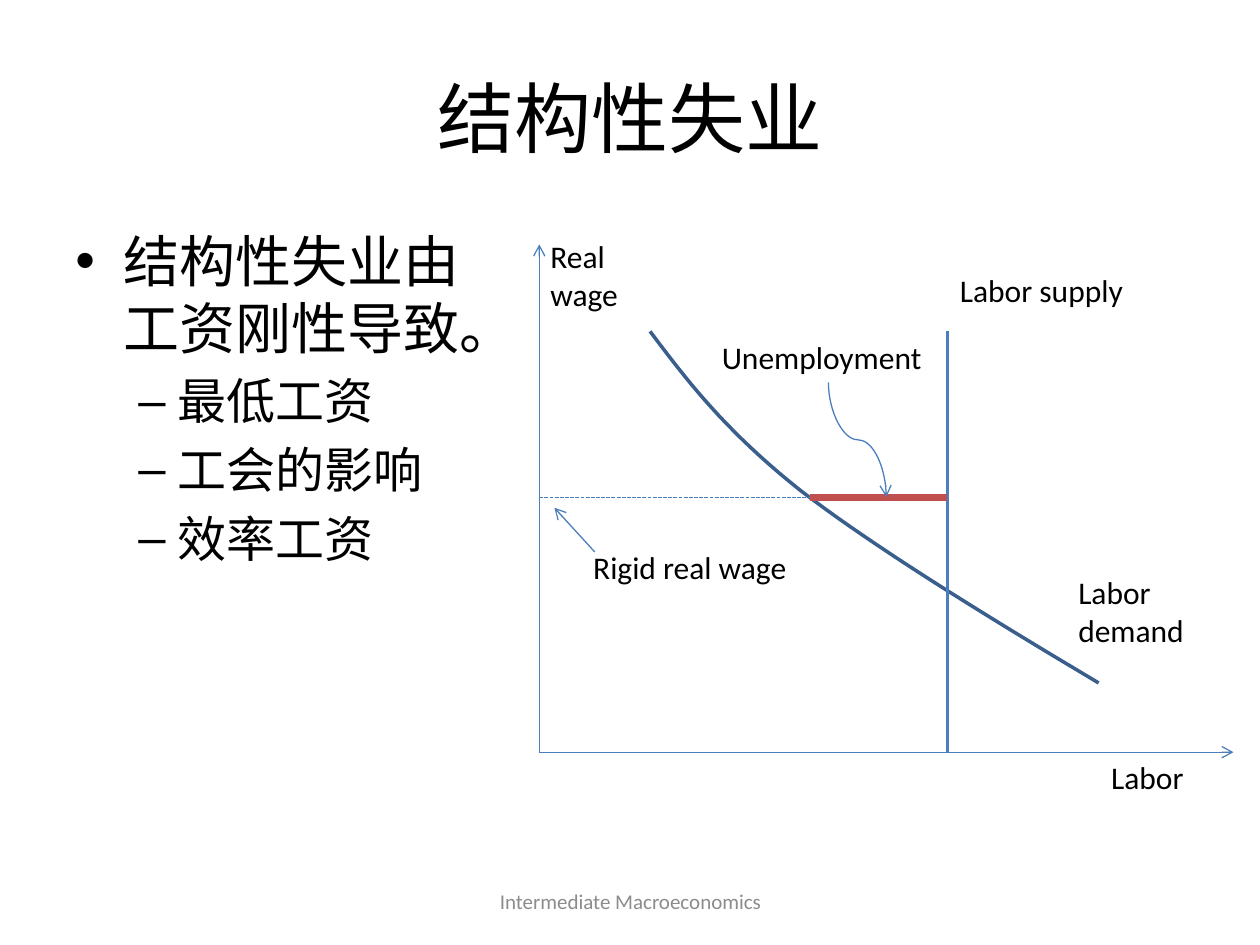
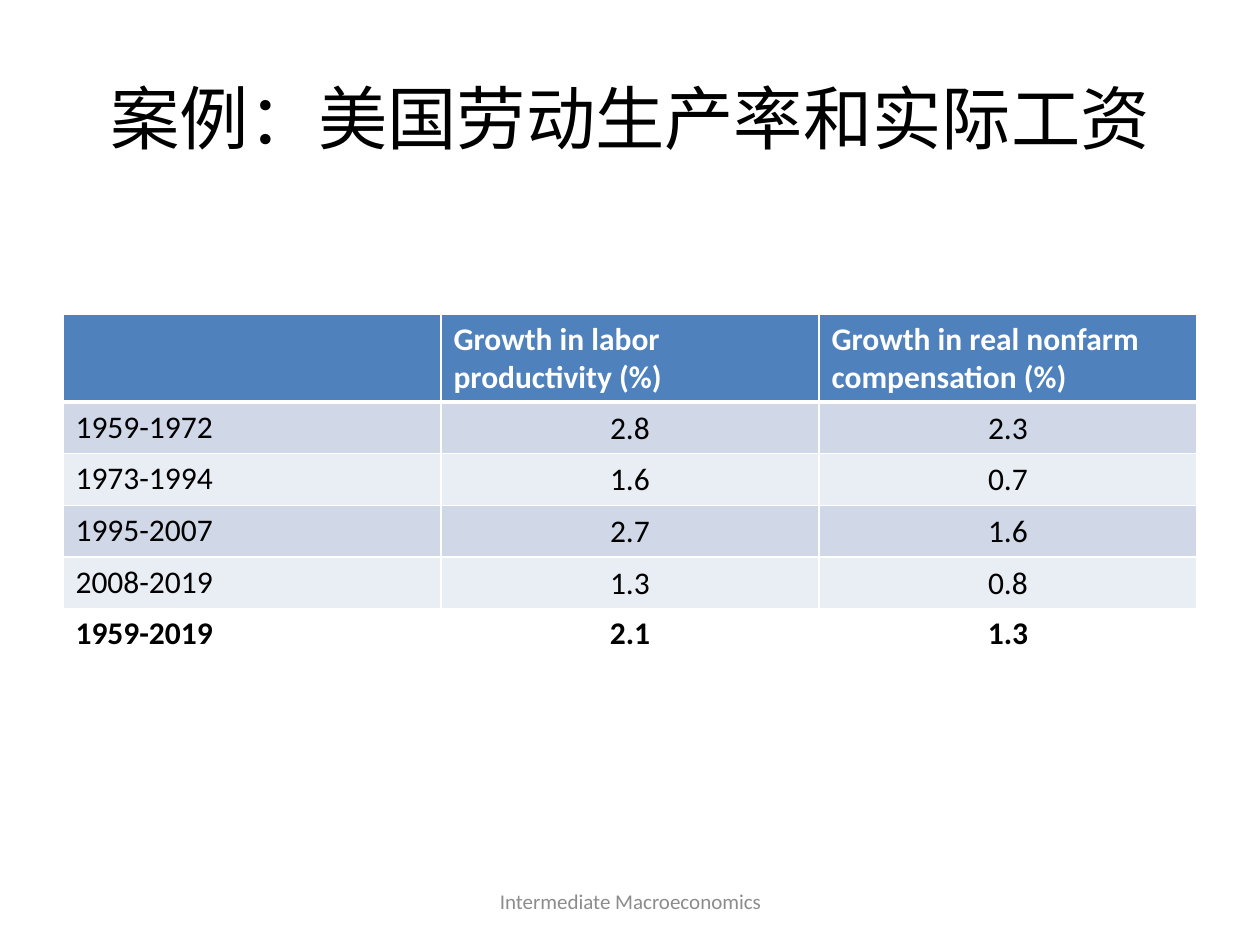
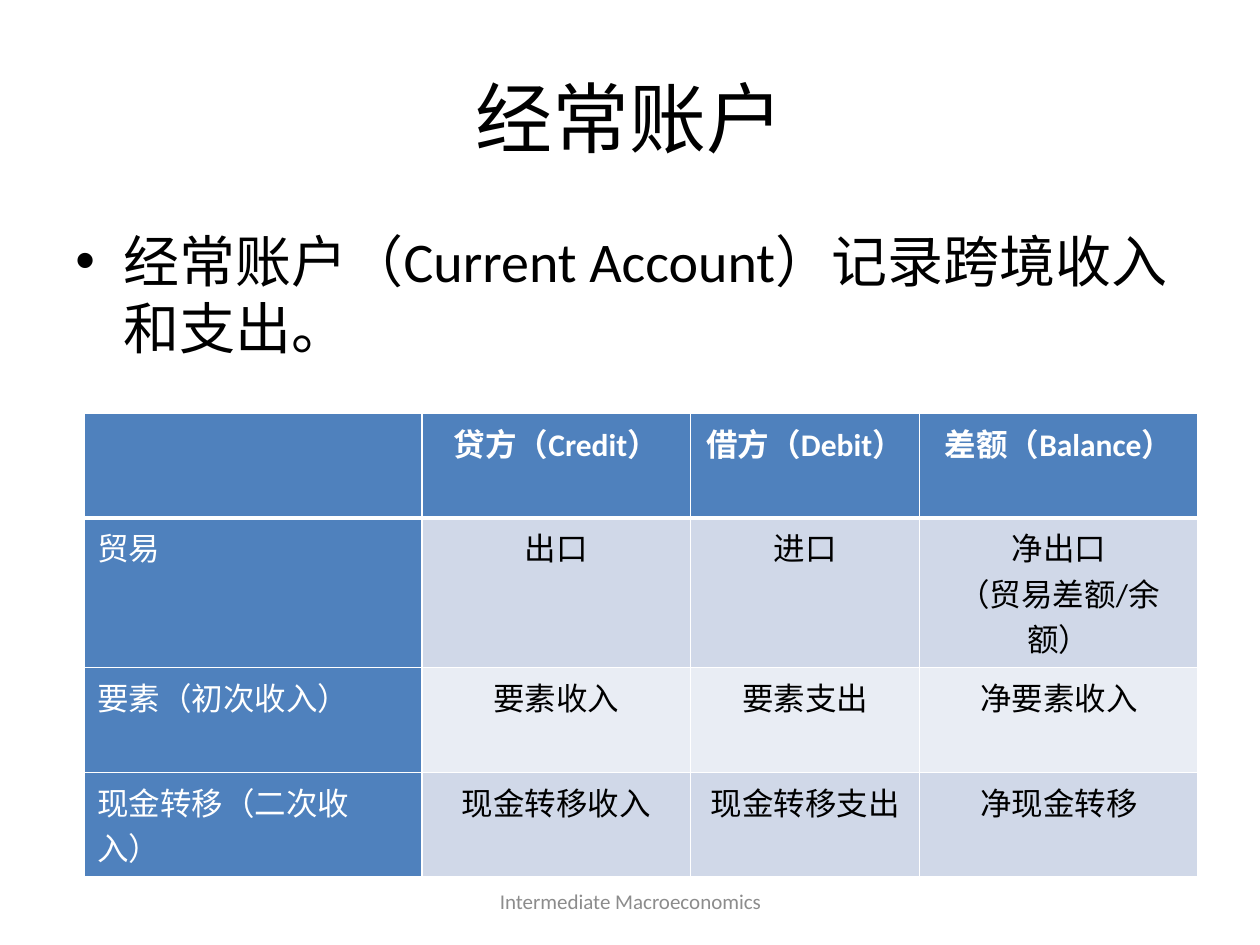
from dataclasses import dataclass

from lxml.etree import SubElement
from pptx import Presentation
from pptx.dml.color import RGBColor
from pptx.enum.dml import MSO_LINE
from pptx.enum.lang import MSO_LANGUAGE_ID as Language
from pptx.enum.shapes import MSO_CONNECTOR as Connector
from pptx.enum.text import MSO_ANCHOR as Anchor, MSO_AUTO_SIZE as AutoSize, PP_ALIGN as Align
from pptx.oxml.ns import qn
from pptx.util import Inches, Pt


@dataclass(frozen=True)
class Theme:
    font: str = "Calibri"
    text: str = "000000"
    white: str = "FFFFFF"
    footer: str = "8C8C8C"
    axis: str = "4B7EBC"
    demand: str = "3A5F8C"
    gap: str = "C0504D"
    header: str = "4F81BD"
    bands: tuple = ("D0D8E8", "E9EDF4")
    title_size: float = 44
    long_title_size: float = 39.6
    body_sizes: tuple = (32, 28)
    label_size: float = 18
    footer_size: float = 12
    thin: float = 0.75
    curve: float = 2
    thick: float = 4


theme = Theme()


def format_text(text_frame, text, size, color=theme.text, bold=False, alignment=Align.LEFT):
    text_frame.text = text
    text_frame.word_wrap = True
    for paragraph in text_frame.paragraphs:
        paragraph.alignment = alignment
        for run in paragraph.runs:
            run.font.name = theme.font
            run.font.size = Pt(size)
            run.font.bold = bold
            run.font.color.rgb = RGBColor.from_string(color)
            run.font.language_id = Language.SIMPLIFIED_CHINESE


def add_line(slide, start, end, color=theme.axis, width=theme.thin, kind=Connector.STRAIGHT, arrow=False):
    connector = slide.shapes.add_connector(kind, *map(Inches, start + end))
    connector.line.color.rgb = RGBColor.from_string(color)
    connector.line.width = Pt(width)
    if arrow:
        SubElement(connector.line._get_or_add_ln(), qn("a:tailEnd"), type="arrow")
    SubElement(connector._element.spPr, qn("a:effectLst"))
    return connector


presentation = Presentation()
presentation.slide_width = Inches(10)
presentation.slide_height = Inches(7.5)
title_only = presentation.slide_layouts[5]

titles = [
    ("结构性失业", theme.title_size),
    ("案例：美国劳动生产率和实际工资", theme.long_title_size),
    ("经常账户", theme.title_size),
]
slides = []
for text, size in titles:
    slide = presentation.slides.add_slide(title_only)
    title = slide.shapes.title
    title.left, title.top, title.width, title.height = map(Inches, (0.5, 0.3, 9, 1.25))
    format_text(title.text_frame, text, size, alignment=Align.CENTER)
    title.text_frame.vertical_anchor = Anchor.MIDDLE
    title.text_frame.auto_size = AutoSize.NONE
    footer = slide.shapes.add_textbox(*map(Inches, (3.42, 6.95, 3.17, 0.4)))
    format_text(footer.text_frame, "Intermediate Macroeconomics", theme.footer_size,
                theme.footer, alignment=Align.CENTER)
    footer.text_frame.vertical_anchor = Anchor.MIDDLE
    slides.append(slide)
unemployment_slide, productivity_slide, account_slide = slides

bullet_levels = [("•", 0.38, 0.38), ("–", 0.81, 0.31)]
bodies = [
    (unemployment_slide, 3.48, ["结构性失业由工资刚性导致。", "最低工资", "工会的影响", "效率工资"]),
    (account_slide, 9, ["经常账户（Current Account）记录跨境收入和支出。"]),
]
for slide, width, lines in bodies:
    body = slide.shapes.add_textbox(*map(Inches, (0.5, 1.75, width, 4.95)))
    format_text(body.text_frame, "\n".join(lines), theme.body_sizes[0])
    for index, paragraph in enumerate(body.text_frame.paragraphs):
        level = min(index, 1)
        bullet, margin, hanging = bullet_levels[level]
        size = theme.body_sizes[level]
        paragraph.level = level
        paragraph.space_before = Pt(0.2 * size)
        paragraph.runs[0].font.size = Pt(size)
        properties = paragraph._p.get_or_add_pPr()
        properties.set("marL", str(Inches(margin)))
        properties.set("indent", str(-Inches(hanging)))
        SubElement(properties, qn("a:buFont"), typeface="Arial")
        SubElement(properties, qn("a:buChar"), char=bullet)

origin_x, origin_y = 4.28, 5.97
supply_x, rigid_wage_y, curve_top = 7.52, 3.95, 2.63
add_line(unemployment_slide, (origin_x, origin_y), (9.79, origin_y), arrow=True)
add_line(unemployment_slide, (origin_x, origin_y), (origin_x, 1.94), arrow=True)

demand_beziers = [
    ((5.16, curve_top), (5.46, 3.03), (5.76, 3.42), (6.35, 3.89)),
    ((6.35, 3.89), (6.95, 4.35), (7.83, 4.89), (8.72, 5.42)),
]
steps = 20
demand_points = []
for bezier in demand_beziers:
    for step in range(1, steps + 1):
        t = step / steps
        weights = ((1 - t) ** 3, 3 * t * (1 - t) ** 2, 3 * t ** 2 * (1 - t), t ** 3)
        demand_points.append(tuple(
            Inches(sum(weight * point[axis] for weight, point in zip(weights, bezier)))
            for axis in (0, 1)))
builder = unemployment_slide.shapes.build_freeform(*map(Inches, demand_beziers[0][0]))
builder.add_line_segments(demand_points, close=False)
demand_curve = builder.convert_to_shape()
demand_curve.shadow.inherit = False
demand_curve.fill.background()
demand_curve.line.color.rgb = RGBColor.from_string(theme.demand)
demand_curve.line.width = Pt(theme.curve)

rigid_wage = add_line(unemployment_slide, (origin_x, rigid_wage_y), (supply_x, rigid_wage_y))
rigid_wage.line.dash_style = MSO_LINE.SQUARE_DOT
add_line(unemployment_slide, (supply_x, curve_top), (supply_x, origin_y), width=theme.curve)
add_line(unemployment_slide, (6.43, rigid_wage_y), (supply_x, rigid_wage_y), theme.gap, theme.thick)
pointer = add_line(unemployment_slide, (7.26, 3.26), (6.35, 3.72), kind=Connector.CURVE, arrow=True)
pointer._element.spPr.xfrm.set("rot", str(270 * 60000))
add_line(unemployment_slide, (4.72, 4.38), (4.4, 4.03), arrow=True)

labels = [
    ("Unemployment", (5.63, 2.63, 1.89, 0.4)),
    ("Rigid real wage", (4.61, 4.3, 2.2, 0.4)),
    ("Labor demand", (8.46, 4.5, 1.33, 0.71)),
    ("Labor supply", (supply_x, 2.1, 1.61, 0.4)),
    ("Labor", (8.72, origin_y, 1.28, 0.4)),
    ("Real wage", (4.27, 1.83, 1.15, 0.71)),
]
for text, box in labels:
    label = unemployment_slide.shapes.add_textbox(*map(Inches, box))
    format_text(label.text_frame, text, theme.label_size)

productivity_rows = [
    ("", "Growth in labor productivity (%)", "Growth in real nonfarm compensation (%)"),
    ("1959-1972", "2.8", "2.3"),
    ("1973-1994", "1.6", "0.7"),
    ("1995-2007", "2.7", "1.6"),
    ("2008-2019", "1.3", "0.8"),
    ("1959-2019", "2.1", "1.3"),
]
account_rows = [
    ("", "贷方（Credit）", "借方（Debit）", "差额（Balance）"),
    ("贸易", "出口", "进口", "净出口\n（贸易差额/余额）"),
    ("要素（初次收入）", "要素收入", "要素支出", "净要素收入"),
    ("现金转移（二次收入）", "现金转移收入", "现金转移支出", "净现金转移"),
]
tables = [
    (productivity_slide, (0.5, 2.49), (3, 3, 3), (0.66,) + (0.41,) * 5, productivity_rows),
    (account_slide, (0.67, 3.28), (2.68, 2.13, 1.82, 2.21), (0.83, 1.19, 0.83, 0.83), account_rows),
]
for slide, corner, widths, heights, rows in tables:
    box = corner + (sum(widths), sum(heights))
    table = slide.shapes.add_table(len(rows), len(widths), *map(Inches, box)).table
    for column, width in zip(table.columns, widths):
        column.width = Inches(width)
    for row, height in zip(table.rows, heights):
        row.height = Inches(height)
    numeric = rows is productivity_rows
    for row_index, values in enumerate(rows):
        is_header = row_index == 0
        is_total = numeric and row_index == len(rows) - 1
        for column_index, value in enumerate(values):
            cell = table.cell(row_index, column_index)
            is_label = column_index == 0
            is_colored = is_header or (is_label and not numeric)
            is_left = is_label or (is_header and numeric)
            format_text(cell.text_frame, value, theme.label_size,
                        theme.white if is_colored else theme.text,
                        is_header or is_total, Align.LEFT if is_left else Align.CENTER)
            if numeric and not (is_header or is_total or is_label):
                cell.vertical_anchor = Anchor.MIDDLE
                cell.margin_left = cell.margin_right = cell.margin_top = Inches(0.01)
                cell.margin_bottom = 0
            edge_widths = {"a:lnL": 1, "a:lnR": 1,
                           "a:lnT": 3 if row_index == 1 else 1, "a:lnB": 3 if is_header else 1}
            for edge, width in edge_widths.items():
                border = SubElement(cell._tc.get_or_add_tcPr(), qn(edge), w=str(Pt(width)))
                fill = SubElement(border, qn("a:solidFill"))
                SubElement(fill, qn("a:srgbClr"), val=theme.white)
            if is_colored:
                color = theme.header
            elif is_total:
                color = theme.white
            else:
                color = theme.bands[(row_index - 1) % 2]
            cell.fill.solid()
            cell.fill.fore_color.rgb = RGBColor.from_string(color)

presentation.save("out.pptx")
